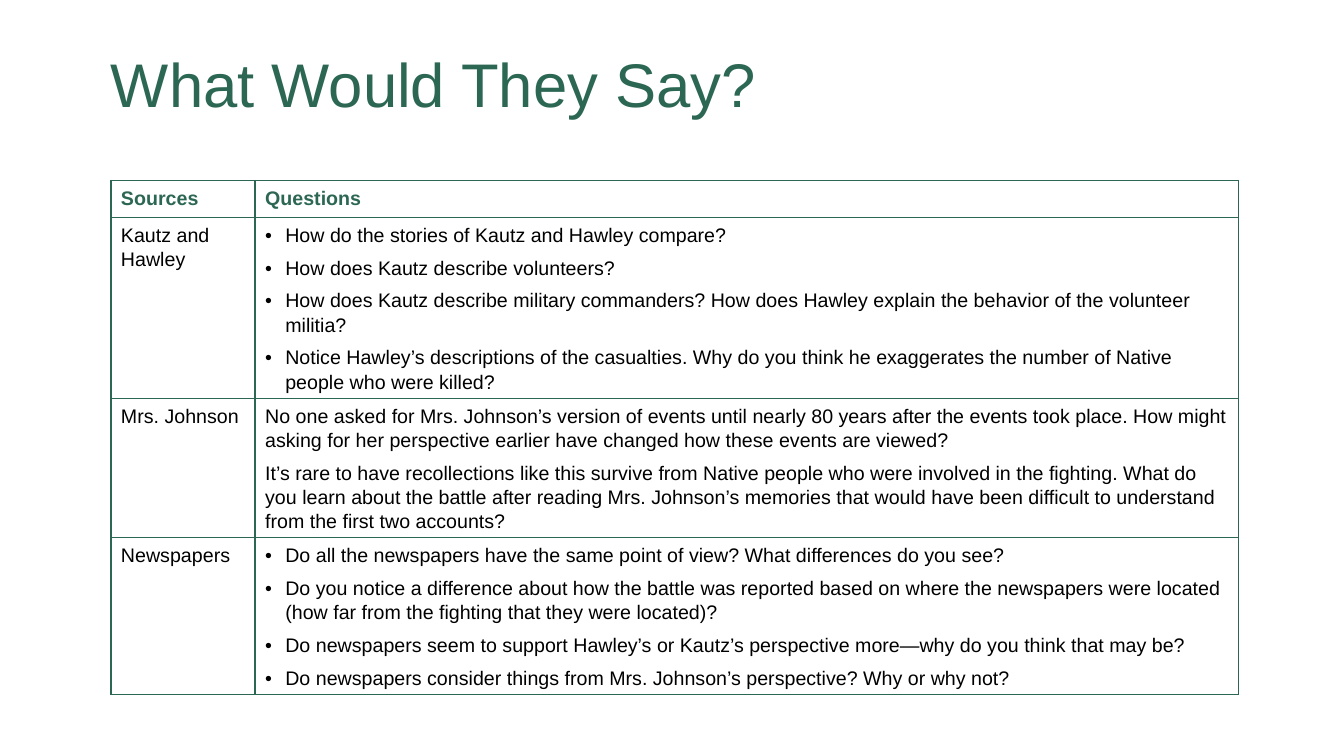
from lxml import etree
from pptx import Presentation
from pptx.dml.color import RGBColor
from pptx.enum.text import MSO_ANCHOR, MSO_AUTO_SIZE, PP_ALIGN
from pptx.oxml.ns import qn
from pptx.util import Inches, Pt

TOP, NO_AUTOFIT, LEFT = MSO_ANCHOR.TOP, MSO_AUTO_SIZE.NONE, PP_ALIGN.LEFT
GREEN = RGBColor(0x2C, 0x67, 0x54)
BLACK = RGBColor(0, 0, 0)
WHITE = RGBColor(0xFF, 0xFF, 0xFF)
FONT = "Arial"
INDENT = Inches(0.2)
COLUMN_WIDTHS = (1.43, 9.75)

# Source, questions, whether the questions are bulleted, row height
ROWS = [
    ("Sources", ["Questions"], False, 0.37),
    ("Kautz and Hawley", [
        "How do the stories of Kautz and Hawley compare?",
        "How does Kautz describe volunteers?",
        "How does Kautz describe military commanders? How does Hawley explain "
        "the behavior of the volunteer militia?",
        "Notice Hawley’s descriptions of the casualties. Why do you think he "
        "exaggerates the number of Native people who were killed?",
    ], True, 1.5),
    ("Mrs. Johnson", [
        "No one asked for Mrs. Johnson’s version of events until nearly 80 years "
        "after the events took place. How might asking for her perspective earlier "
        "have changed how these events are viewed?",
        "It’s rare to have recollections like this survive from Native people who "
        "were involved in the fighting. What do you learn about the battle after "
        "reading Mrs. Johnson’s memories that would have been difficult to "
        "understand from the first two accounts?",
    ], False, 1.06),
    ("Newspapers", [
        "Do all the newspapers have the same point of view? What differences do you see?",
        "Do you notice a difference about how the battle was reported based on where "
        "the newspapers were located \n(how far from the fighting that they were located)?",
        "Do newspapers seem to support Hawley’s or Kautz’s perspective more—why do "
        "you think that may be?",
        "Do newspapers consider things from Mrs. Johnson’s perspective? Why or why not?",
    ], True, 1.51),
]


def write(frame, texts, size=14, color=BLACK, bold=False, bulleted=False,
          line_spacing=1.1, space_after=6):
    """Fill a text frame with one paragraph per text; a newline breaks the line."""
    for i, text in enumerate(texts):
        paragraph = frame.add_paragraph() if i else frame.paragraphs[0]
        paragraph.text = text
        paragraph.alignment = LEFT
        paragraph.line_spacing = line_spacing
        paragraph.space_after = Pt(space_after)
        for run in paragraph.runs:
            run.font.name = FONT
            run.font.size = Pt(size)
            run.font.bold = bold
            run.font.color.rgb = color
        if bulleted:
            properties = paragraph._p.get_or_add_pPr()
            properties.set("marL", str(INDENT))
            properties.set("indent", str(-INDENT))
            etree.SubElement(properties, qn("a:buFont"), typeface=FONT)
            etree.SubElement(properties, qn("a:buChar"), char="•")


def add_borders(cell):
    properties = cell._tc.get_or_add_tcPr()
    for i, side in enumerate(("a:lnL", "a:lnR", "a:lnT", "a:lnB")):
        border = etree.Element(qn(side), w=str(Pt(1)))
        fill = etree.SubElement(border, qn("a:solidFill"))
        etree.SubElement(fill, qn("a:srgbClr"), val=str(GREEN))
        properties.insert(i, border)


deck = Presentation()
deck.slide_width, deck.slide_height = Inches(13.33), Inches(7.5)
slide = deck.slides.add_slide(deck.slide_layouts[5])

title = slide.shapes.title
title.left, title.top = Inches(1.1), Inches(0.54)
title.width, title.height = Inches(10.78), Inches(1.41)
heading = title.text_frame
heading.margin_left = heading.margin_right = heading.margin_top = heading.margin_bottom = 0
heading.vertical_anchor = TOP
heading.auto_size = NO_AUTOFIT
heading.word_wrap = True
write(heading, ["What Would They Say?"], size=44, color=GREEN,
      line_spacing=0.9, space_after=0)

questions_table = slide.shapes.add_table(
    len(ROWS), len(COLUMN_WIDTHS), Inches(1.1), Inches(1.79),
    Inches(sum(COLUMN_WIDTHS)), Inches(sum(row[-1] for row in ROWS))).table
questions_table.horz_banding = False
for column, width in zip(questions_table.columns, COLUMN_WIDTHS):
    column.width = Inches(width)

for r, (source, questions, bulleted, height) in enumerate(ROWS):
    questions_table.rows[r].height = Inches(height)
    is_header = r == 0
    for c, texts in enumerate(([source], questions)):
        cell = questions_table.cell(r, c)
        cell.fill.solid()
        cell.fill.fore_color.rgb = WHITE
        add_borders(cell)
        write(cell.text_frame, texts, color=GREEN if is_header else BLACK,
              bold=is_header, bulleted=bulleted and c == 1)

deck.save("out.pptx")
